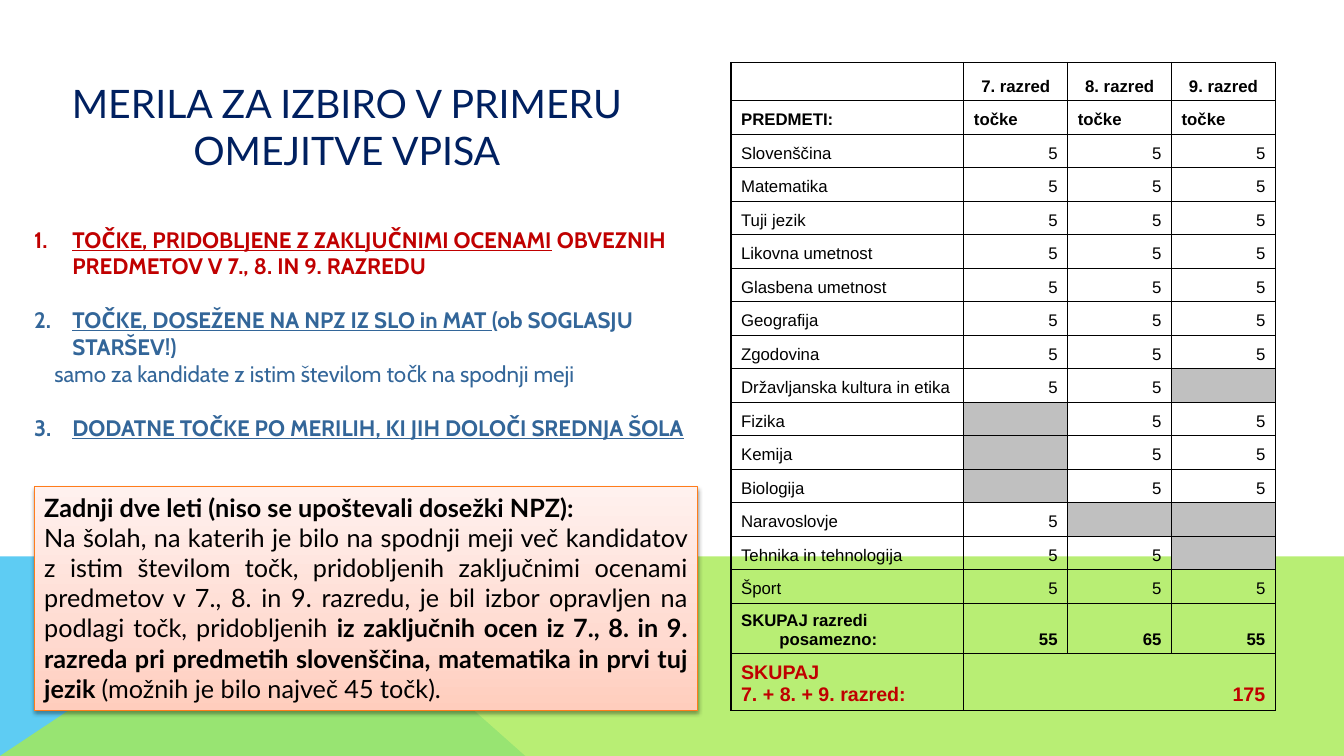
from lxml.etree import SubElement
from pptx import Presentation
from pptx.dml.color import RGBColor
from pptx.enum.shapes import MSO_SHAPE
from pptx.enum.text import MSO_ANCHOR, MSO_AUTO_SIZE, PP_ALIGN
from pptx.oxml.ns import qn
from pptx.util import Inches, Pt

RED, BLUE, NAVY, BLACK, GREY = "C00000", "336699", "002060", "000000", "C0C0C0"
HANGING = 0.38


def rgb(color):
    return RGBColor.from_string(color)


def add_element(parent, tag, **attributes):
    return SubElement(parent, qn(tag), {k: str(v) for k, v in attributes.items()})


def style(paragraph, font, size, color, bold=None, align=None):
    paragraph.font.name = font
    paragraph.font.size = Pt(size)
    paragraph.font.color.rgb = rgb(color)
    paragraph.font.bold = bold
    paragraph.alignment = align


def indent(paragraph, left, first=0):
    properties = paragraph._p.get_or_add_pPr()
    properties.set("marL", str(Inches(left)))
    properties.set("indent", str(Inches(first)))
    return properties


def number(paragraph, start):
    """Give the paragraph a hanging automatic number."""
    properties = indent(paragraph, HANGING, -HANGING)
    bullet = add_element(properties, "a:buAutoNum", type="arabicPeriod", startAt=start)
    default_run = properties.find(qn("a:defRPr"))
    if default_run is not None:
        default_run.addprevious(bullet)


def paragraphs_of(frame, count):
    return [frame.paragraphs[0]] + [frame.add_paragraph() for _ in range(count - 1)]


def add_background(slide, left, top, width, height):
    right, bottom = left + width, top + height
    peak = left + 2.98
    bands = [
        ([(left, bottom), (left, top), (peak, top), (left + 5.21, bottom)], "5ECCF3", 100),
        ([(left, bottom), (peak, top), (right, top), (right, bottom)], "A7EA52", 80),
    ]
    for points, color, opacity in bands:
        corners = [(Inches(x), Inches(y)) for x, y in points]
        builder = slide.shapes.build_freeform(*corners[0])
        builder.add_line_segments(corners[1:], close=True)
        band = builder.convert_to_shape()
        band.shadow.inherit = False
        band.line.fill.background()
        band.fill.solid()
        band.fill.fore_color.rgb = rgb(color)
        if opacity < 100:
            tint = band._element.spPr.find(qn("a:solidFill"))[0]
            add_element(tint, "a:alpha", val=opacity * 1000)


def add_title(slide, left, top, width, height):
    title = slide.shapes.title
    title.left, title.top = Inches(left), Inches(top)
    title.width, title.height = Inches(width), Inches(height)
    frame = title.text_frame
    frame.auto_size = MSO_AUTO_SIZE.NONE
    frame.vertical_anchor = MSO_ANCHOR.MIDDLE
    frame.text = "MERILA ZA IZBIRO V PRIMERU\nOMEJITVE VPISA"
    for line in frame.paragraphs:
        style(line, "Lato", 28, NAVY, align=PP_ALIGN.CENTER)


def add_criteria(slide, left, top, width, height):
    criteria = [
        (1, "TOČKE, PRIDOBLJENE Z ZAKLJUČNIMI OCENAMI",
         " OBVEZNIH PREDMETOV V 7., 8. IN 9. RAZREDU", RED),
        (2, "TOČKE, DOSEŽENE NA NPZ IZ SLO in MAT ", "(ob SOGLASJU STARŠEV!)", BLUE),
        (None, "", "samo za kandidate z istim številom točk na spodnji meji", BLUE),
        (3, "DODATNE TOČKE PO MERILIH, KI JIH DOLOČI SREDNJA ŠOLA", "", BLUE),
    ]
    frame = slide.shapes.add_textbox(
        Inches(left), Inches(top), Inches(width), Inches(height)).text_frame
    frame.word_wrap = True
    for criterion, (order, underlined, plain, color) in zip(
            paragraphs_of(frame, len(criteria)), criteria):
        style(criterion, "Cabin", 16, color, bold=order is not None)
        for text, underline in ((underlined, True), (plain, False)):
            if text:
                run = criterion.add_run()
                run.text = text
                run.font.underline = underline
        if order is None:
            indent(criterion, 0.2)
        else:
            number(criterion, order)
            if order > 1:
                criterion.space_before = Pt(19.2)


def add_explanation(slide, left, top, width, height):
    box = slide.shapes.add_shape(
        MSO_SHAPE.RECTANGLE, Inches(left), Inches(top), Inches(width), Inches(height))
    box.line.color.rgb = rgb("FF7C1B")
    box.line.width = Pt(0.75)
    box.fill.gradient()
    box.fill.gradient_angle = 90
    properties = box._element.spPr
    stops = properties.find(qn("a:gradFill")).find(qn("a:gsLst"))
    stops.clear()
    for position, color in ((0, "FFCDBD"), (35, "FFDBD1"), (100, "FFF1EE")):
        stop = add_element(stops, "a:gs", pos=position * 1000)
        add_element(stop, "a:srgbClr", val=color)
    box.shadow.inherit = False
    shadow = add_element(properties.find(qn("a:effectLst")), "a:outerShdw", blurRad=Pt(3.1),
                         dist=Pt(1.6), dir=90 * 60000, rotWithShape=0)
    add_element(add_element(shadow, "a:srgbClr", val=BLACK), "a:alpha", val=38000)

    content = [
        [("Zadnji dve leti (niso se upoštevali dosežki NPZ):", True)],
        [("Na šolah, na katerih je bilo na spodnji meji več kandidatov z istim številom točk, "
          "pridobljenih zaključnimi ocenami predmetov v 7., 8. in 9. razredu, je bil izbor "
          "opravljen na podlagi točk, pridobljenih ", False),
         ("iz zaključnih ocen iz 7., 8. in 9. razreda pri predmetih slovenščina, matematika "
          "in prvi tuj jezik ", True),
         ("(možnih je bilo največ 45 točk).", False)],
    ]
    frame = box.text_frame
    frame.word_wrap = True
    frame.vertical_anchor = MSO_ANCHOR.TOP
    for paragraph, runs in zip(paragraphs_of(frame, len(content)), content):
        style(paragraph, "Lato", 18, BLACK, align=PP_ALIGN.JUSTIFY)
        for text, bold in runs:
            run = paragraph.add_run()
            run.text = text
            run.font.bold = bold


def draw_borders(cell):
    properties = cell._tc.get_or_add_tcPr()
    for place, side in enumerate(("a:lnL", "a:lnR", "a:lnT", "a:lnB")):
        border = add_element(properties, side, w=Pt(1))
        add_element(add_element(border, "a:solidFill"), "a:srgbClr", val=BLACK)
        properties.insert(place, border)


def fill_cell(cell, text, size=12, color=BLACK, bold=False, align=None, shaded=False):
    cell.vertical_anchor = MSO_ANCHOR.BOTTOM
    if shaded:
        cell.fill.solid()
        cell.fill.fore_color.rgb = rgb(GREY)
    else:
        cell.fill.background()
    draw_borders(cell)
    if not text:
        cell.margin_top = cell.margin_bottom = 0
    cell.text = text
    for paragraph in cell.text_frame.paragraphs:
        style(paragraph, "Arial", size, color, bold, align)
        indent(paragraph, HANGING, -HANGING)


def add_points_table(slide, left, top, width, height):
    subjects = ["Slovenščina", "Matematika", "Tuji jezik", "Likovna umetnost",
                "Glasbena umetnost", "Geografija", "Zgodovina", "Državljanska kultura in etika",
                "Fizika", "Kemija", "Biologija", "Naravoslovje", "Tehnika in tehnologija", "Šport"]
    not_taught = {"Državljanska kultura in etika": [3], "Fizika": [1], "Kemija": [1],
                  "Biologija": [1], "Naravoslovje": [2, 3], "Tehnika in tehnologija": [3]}
    rows = [["", "7. razred", "8. razred", "9. razred"], ["PREDMETI:"] + ["točke"] * 3]
    for subject in subjects:
        skipped = not_taught.get(subject, [])
        rows.append([subject] + ["" if grade in skipped else "5" for grade in (1, 2, 3)])
    rows.append(["SKUPAJ razredi posamezno:", "55", "65", "55"])
    rows.append(["SKUPAJ\n7. + 8. + 9. razred:", "175", "", ""])

    table = slide.shapes.add_table(
        len(rows), 4, Inches(left), Inches(top), Inches(width), Inches(height)).table
    table.first_row = table.horz_banding = False
    subject_width, header, class_totals, total = 2.31, 0.38, 0.5, 0.56
    for column, grid_column in enumerate(table.columns):
        grid_column.width = Inches((width - subject_width) / 3 if column else subject_width)
    subject_height = (height - header - class_totals - total) / (len(rows) - 3)
    heights = [header] + [subject_height] * (len(rows) - 3) + [class_totals, total]
    for row, row_height in zip(table.rows, heights):
        row.height = Inches(row_height)

    last = len(rows) - 1
    for r, row in enumerate(rows):
        for c, text in enumerate(row):
            align = PP_ALIGN.LEFT
            if c and r != 1:
                align = PP_ALIGN.RIGHT if r else PP_ALIGN.CENTER
            fill_cell(table.cell(r, c), text, size=14 if r == last else 12,
                      color=RED if r == last else BLACK, bold=r < 2 or r >= last - 1,
                      align=align, shaded=not text and 1 < r < last)
    table.cell(last, 1).merge(table.cell(last, 3))


def main():
    deck = Presentation()
    deck.slide_width, deck.slide_height = Inches(13.33), Inches(7.5)
    slide = deck.slides.add_slide(deck.slide_layouts[5])
    add_background(slide, 0, 5.52, 13.33, 1.98)
    add_title(slide, 0.07, 0.47, 6.74, 1.57)
    add_criteria(slide, 0.24, 2.19, 6.74, 2.26)
    add_points_table(slide, 7.25, 0.62, 5.4, 6.43)
    add_explanation(slide, 0.34, 4.83, 6.58, 2.22)
    deck.save("out.pptx")


if __name__ == "__main__":
    main()
